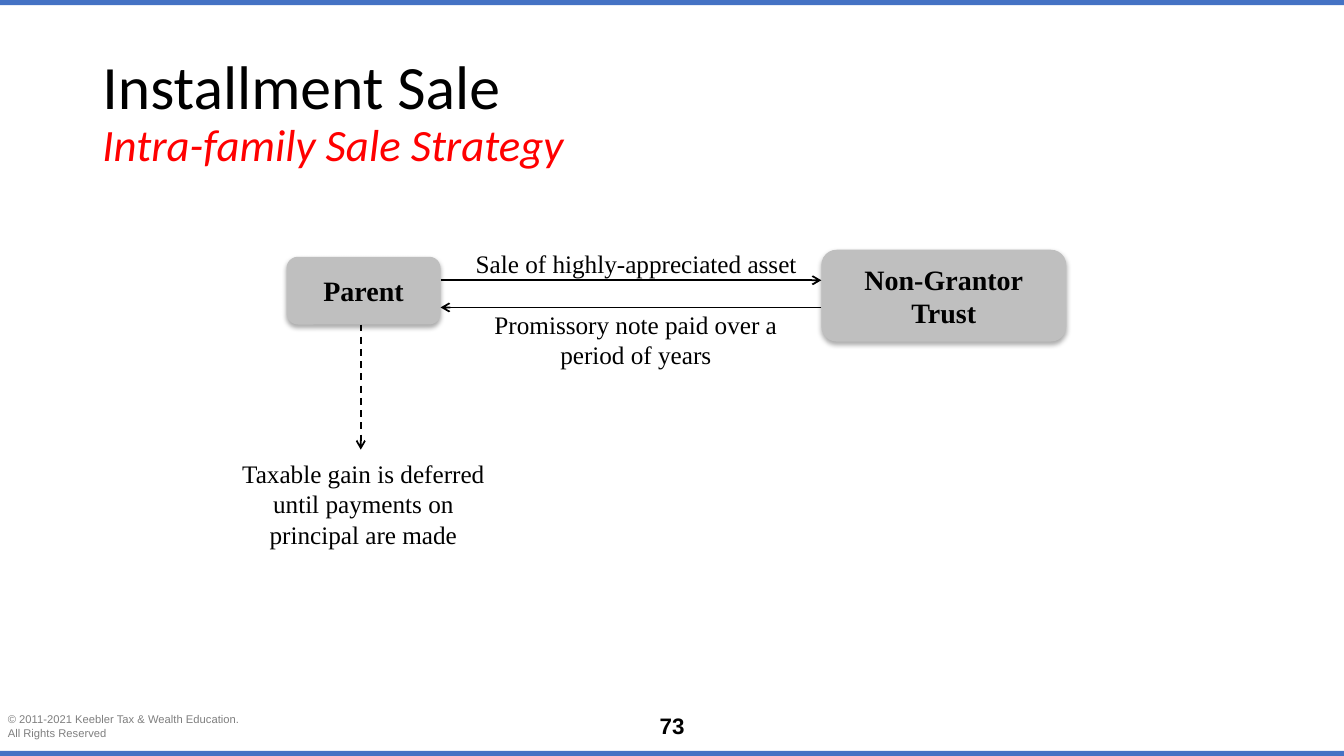
from dataclasses import dataclass

from pptx import Presentation
from pptx.dml.color import RGBColor
from pptx.enum.dml import MSO_LINE
from pptx.enum.shapes import MSO_CONNECTOR, MSO_SHAPE
from pptx.enum.text import MSO_ANCHOR, MSO_AUTO_SIZE, PP_ALIGN
from pptx.oxml import parse_xml
from pptx.oxml.ns import nsdecls
from pptx.util import Pt


@dataclass(frozen=True)
class Theme:
    black: RGBColor = RGBColor(0, 0, 0)
    red: RGBColor = RGBColor(0xFF, 0, 0)
    blue: RGBColor = RGBColor(0x44, 0x72, 0xC4)
    party_fill: RGBColor = RGBColor(0xBF, 0xBF, 0xBF)
    copyright_gray: RGBColor = RGBColor(0x7F, 0x7F, 0x7F)
    title_font: str = "Calibri"
    footer_font: str = "Arial"
    diagram_font: str = "Times New Roman"
    title_size: int = 44
    subtitle_size: int = 32
    party_size: int = 20
    label_size: int = 18
    number_size: int = 16
    copyright_size: int = 8
    line_width: float = 1.25


THEME = Theme()
SLIDE_WIDTH, SLIDE_HEIGHT = 960, 540


@dataclass(frozen=True)
class Box:
    left: float
    top: float
    width: float
    height: float

    @property
    def right(self):
        return self.left + self.width

    @property
    def bottom(self):
        return self.top + self.height

    def inner(self, left, top, width, height):
        """Return a box offset from this one's top left corner."""
        return Box(self.left + left, self.top + top, width, height)

    def lengths(self):
        return Pt(self.left), Pt(self.top), Pt(self.width), Pt(self.height)


def format_span(span, font, size, color, bold=False, italic=False):
    span.font.name = font
    span.font.size = Pt(size)
    span.font.color.rgb = color
    span.font.bold = bold
    span.font.italic = italic


def write(frame, text, font, size, color, bold=False, align=PP_ALIGN.CENTER):
    frame.text = text
    for para in frame.paragraphs:
        para.alignment = align
        for span in para.runs:
            format_span(span, font, size, color, bold)


def set_diagram_margins(frame):
    frame.margin_left = frame.margin_right = Pt(8)
    frame.margin_top = frame.margin_bottom = Pt(4)


def add_text(slide, box, text, font, size, color, wrap=True, **style):
    frame = slide.shapes.add_textbox(*box.lengths()).text_frame
    frame.word_wrap = wrap
    frame.auto_size = MSO_AUTO_SIZE.SHAPE_TO_FIT_TEXT
    write(frame, text, font, size, color, **style)
    return frame


def add_label(slide, box, text):
    frame = add_text(slide, box, text, THEME.diagram_font, THEME.label_size, THEME.black)
    set_diagram_margins(frame)


def add_party(slide, box, name):
    party = slide.shapes.add_shape(MSO_SHAPE.ROUNDED_RECTANGLE, *box.lengths())
    party.adjustments[0] = 0.167
    party.fill.solid()
    party.fill.fore_color.rgb = THEME.party_fill
    party.line.fill.background()
    party._element.spPr.append(parse_xml(
        f'<a:effectLst {nsdecls("a")}>'
        '<a:outerShdw blurRad="44450" dist="27940" dir="5400000" algn="ctr" rotWithShape="0">'
        f'<a:srgbClr val="{THEME.black}"><a:alpha val="32000"/></a:srgbClr>'
        '</a:outerShdw></a:effectLst>'))
    frame = party.text_frame
    frame.word_wrap = True
    frame.vertical_anchor = MSO_ANCHOR.MIDDLE
    set_diagram_margins(frame)
    write(frame, name, THEME.diagram_font, THEME.party_size, THEME.black, bold=True)


def add_arrow(slide, start, end, dashed=False):
    arrow = slide.shapes.add_connector(
        MSO_CONNECTOR.STRAIGHT, *(Pt(length) for length in (*start, *end)))
    arrow.line.color.rgb = THEME.black
    arrow.line.width = Pt(THEME.line_width)
    if dashed:
        arrow.line.dash_style = MSO_LINE.DASH
    arrow.line._get_or_add_ln().append(parse_xml(f'<a:tailEnd {nsdecls("a")} type="arrow"/>'))
    arrow._element.spPr.append(parse_xml(f'<a:effectLst {nsdecls("a")}/>'))


def add_frame(slide, box):
    """Draw the bars on the top and bottom edges, the copyright and the page number."""
    thickness = 3.6
    for top in (0, box.height - thickness):
        bar = slide.shapes.add_shape(
            MSO_SHAPE.RECTANGLE, *box.inner(0, top, box.width, thickness).lengths())
        bar.shadow.inherit = False
        bar.fill.solid()
        bar.fill.fore_color.rgb = THEME.blue
        bar.line.fill.background()

    footer_top = box.height - 34.6
    add_text(slide, box.inner(-1.5, footer_top, 183.6, 26.6),
             "© 2011-2021 Keebler Tax & Wealth Education.\nAll Rights Reserved",
             THEME.footer_font, THEME.copyright_size, THEME.copyright_gray,
             wrap=False, align=PP_ALIGN.LEFT)
    add_text(slide, box.inner(box.width / 2 - 27, footer_top, 54, 26.6), "73",
             THEME.footer_font, THEME.number_size, THEME.black, bold=True)


def add_title(slide, box):
    title = slide.shapes.title
    title.left, title.top, title.width, title.height = box.lengths()
    frame = title.text_frame
    frame.word_wrap = True
    frame.auto_size = MSO_AUTO_SIZE.NONE
    frame.vertical_anchor = MSO_ANCHOR.MIDDLE
    frame.text = "Installment Sale\vIntra-family Sale Strategy"
    para = frame.paragraphs[0]
    para.alignment = PP_ALIGN.LEFT
    para.line_spacing = 0.9
    heading, subtitle = para.runs
    format_span(heading, THEME.title_font, THEME.title_size, THEME.black)
    format_span(subtitle, THEME.title_font, THEME.subtitle_size, THEME.red, italic=True)


def add_sale_diagram(slide, box):
    parent = box.inner(47, 10, 110, 48.4)
    trust = box.inner(429, 5, 175, 65.6)
    sale_y, note_y = box.top + 26.8, box.top + 46.2
    gain_x = box.left + 100

    add_label(slide, box.inner(133, 0, 327.6, 30.2), "Sale of highly-appreciated asset")
    add_label(slide, box.inner(170.5, 43.4, 252, 51.8),
              "Promissory note paid over a period of years")
    add_label(slide, box.inner(0, 150, 203.8, 73.4),
              "Taxable gain is deferred until payments on principal are made")
    add_party(slide, parent, "Parent")
    add_party(slide, trust, "Non-Grantor\nTrust")
    add_arrow(slide, (parent.right, sale_y), (trust.left, sale_y))
    add_arrow(slide, (trust.left, note_y), (parent.right, note_y))
    add_arrow(slide, (gain_x, parent.bottom), (gain_x, box.top + 147.8), dashed=True)


def main():
    deck = Presentation()
    deck.slide_width, deck.slide_height = Pt(SLIDE_WIDTH), Pt(SLIDE_HEIGHT)
    slide = deck.slides.add_slide(deck.slide_layouts[5])
    add_frame(slide, Box(0, 0, SLIDE_WIDTH, SLIDE_HEIGHT))
    add_title(slide, Box(66, 28.8, 828, 104.4))
    add_sale_diagram(slide, Box(157.7, 173.4, 604, 223.4))
    deck.save("out.pptx")


if __name__ == "__main__":
    main()
